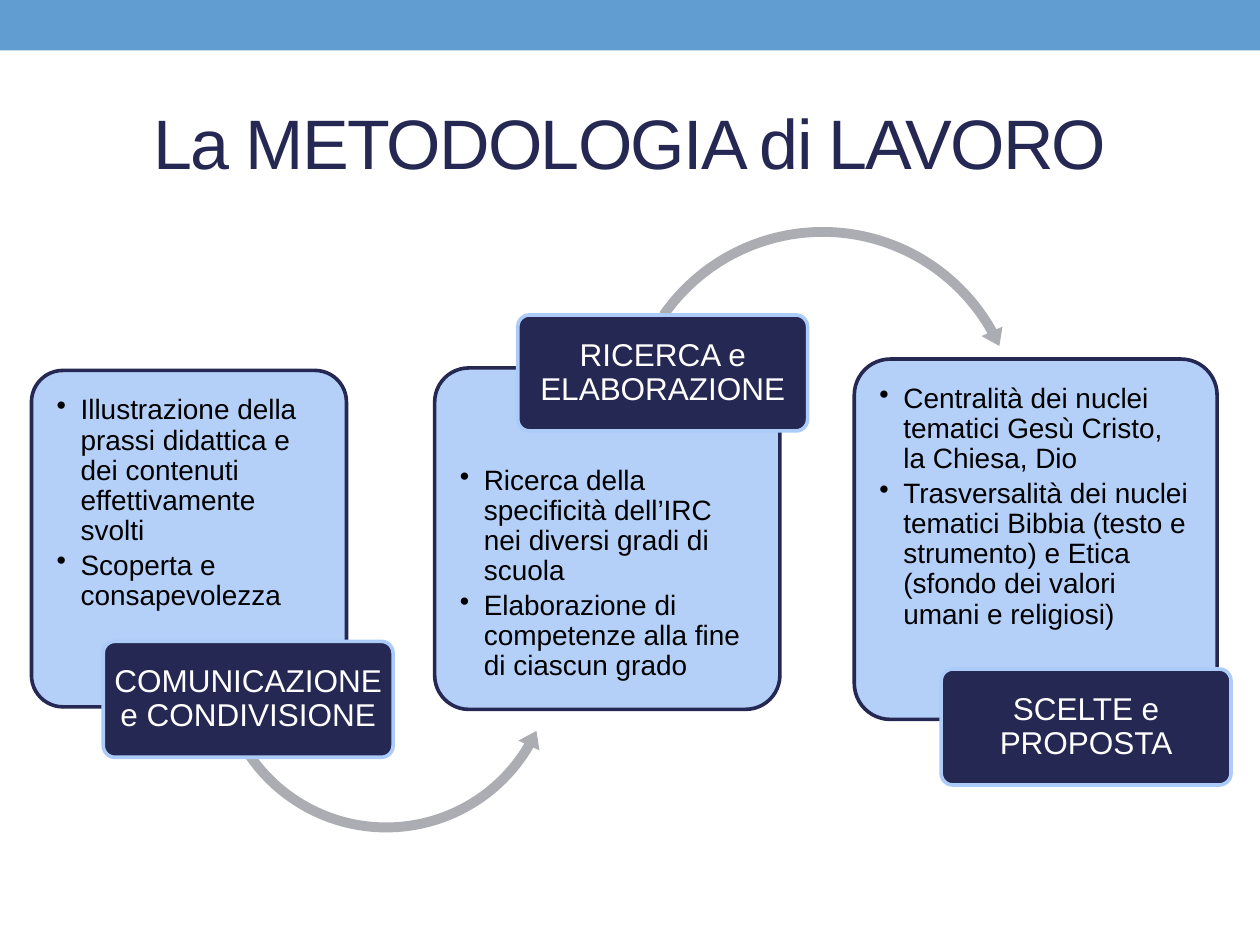
from lxml.etree import SubElement
from pptx import Presentation
from pptx.dml.color import RGBColor
from pptx.enum.shapes import MSO_SHAPE as Shape
from pptx.enum.text import MSO_ANCHOR as Anchor, PP_ALIGN as Align
from pptx.oxml.ns import qn
from pptx.util import Inches, Pt

COLUMNS, ROWS = 100, 75
CELL = Inches(10) // COLUMNS
FONT = "Arial"
COLORS = {
    "band": "629DD1",
    "navy": "242852",
    "sky": "ACCBF9",
    "arrow": "ACADB3",
    "white": "FFFFFF",
    "black": "000000",
}
LABEL_SIZE = (23, 9.2)
LABEL_PADDING = 0.27
CARD_PADDING = 0.6
STEPS = [
    {
        "card": (2.5, 29.4, 25, 26.7),
        "body": (30, 19.8),
        "label": (8.2, 50.9),
        "title": "COMUNICAZIONE e CONDIVISIONE",
        "points": [
            "Illustrazione della prassi didattica e dei contenuti effettivamente svolti",
            "Scoperta e consapevolezza",
        ],
        "arrow": (Shape.LEFT_CIRCULAR_ARROW, (16.6, 38.5, 28.1, 28.1),
                  (0.028, 3.403, 18.17, 87.256, 0.033)),
    },
    {
        "card": (34.5, 29.2, 27.4, 27.1),
        "body": (35.6, 20),
        "label": (41.1, 25),
        "title": "RICERCA e ELABORAZIONE",
        "points": [
            "Ricerca della specificità dell’IRC nei diversi gradi di scuola",
            "Elaborazione di competenze alla fine di ciascun grado",
        ],
        "arrow": (Shape.CIRCULAR_ARROW, (49, 17.5, 32.6, 32.6),
                  (0.024, 2.904, 198.503, 128.918, 0.028)),
    },
    {
        "card": (67.8, 28.5, 28.8, 28.6),
        "body": (29.1, 21.2),
        "label": (74.7, 53.1),
        "title": "SCELTE e PROPOSTA",
        "points": [
            "Centralità dei nuclei tematici Gesù Cristo, la Chiesa, Dio",
            "Trasversalità dei nuclei tematici Bibbia (testo e strumento) "
            "e Etica (sfondo dei valori umani e religiosi)",
        ],
        "arrow": None,
    },
]


def color(name):
    return RGBColor.from_string(COLORS[name])


def place(area):
    return [round(cells * CELL) for cells in area]


def add_shape(slide, kind, area, fill, line=None, adjustments=()):
    shape = slide.shapes.add_shape(kind, *place(area))
    shape.shadow.inherit = False
    shape.fill.solid()
    shape.fill.fore_color.rgb = color(fill)
    if line:
        shape.line.color.rgb = color(line)
        shape.line.width = Pt(2.08)
    else:
        shape.line.fill.background()
    for index, value in enumerate(adjustments):
        shape.adjustments[index] = value
    return shape


def add_text(slide, area, lines, size, font_color, align, anchor, insets, spacing=1.0):
    text_frame = slide.shapes.add_textbox(*place(area)).text_frame
    text_frame.word_wrap = True
    text_frame.vertical_anchor = anchor
    text_frame.margin_left = text_frame.margin_right = Inches(insets[0])
    text_frame.margin_top = text_frame.margin_bottom = Inches(insets[1])
    text_frame.text = "\n".join(lines)
    for paragraph in text_frame.paragraphs:
        paragraph.alignment = align
        paragraph.line_spacing = spacing
        font = paragraph.runs[0].font
        font.name, font.size = FONT, Pt(size)
        font.color.rgb = color(font_color)
    return text_frame


def add_title(slide, text):
    text_frame = add_text(slide, (5, 5.8, 90, 10.8), [text], 40, "navy",
                          Align.CENTER, Anchor.MIDDLE, (0.1, 0.05))
    text_frame.paragraphs[0].runs[0].font._element.set("spc", "-100")


def add_bullet(paragraph):
    paragraph.level = 1
    paragraph.space_after = Pt(2.4)
    properties = paragraph._p.get_or_add_pPr()
    properties.set("marL", str(Inches(0.19)))
    properties.set("indent", str(-Inches(0.19)))
    SubElement(properties, qn("a:buChar")).set("char", "•")


def add_card(slide, step):
    left, top, width, height = step["card"]
    card = add_shape(slide, Shape.ROUNDED_RECTANGLE, step["card"], "sky", "navy", [0.1])
    fill_color = card._element.spPr.find(qn("a:solidFill"))[0]
    SubElement(fill_color, qn("a:alpha")).set("val", "90000")
    body_top, body_height = step["body"]
    area = (left + CARD_PADDING, body_top, width - 2 * CARD_PADDING, body_height)
    text_frame = add_text(slide, area, step["points"], 16, "black",
                          Align.LEFT, Anchor.TOP, (0.14, 0.14), 0.9)
    for paragraph in text_frame.paragraphs:
        add_bullet(paragraph)


def add_arrow(slide, arrow):
    kind, area, adjustments = arrow
    add_shape(slide, kind, area, "arrow", adjustments=adjustments)


def add_label(slide, step):
    left, top = step["label"]
    width, height = LABEL_SIZE
    add_shape(slide, Shape.ROUNDED_RECTANGLE, (left, top, width, height),
              "navy", "sky", [0.1])
    area = (left + LABEL_PADDING, top + LABEL_PADDING,
            width - 2 * LABEL_PADDING, height - 2 * LABEL_PADDING)
    add_text(slide, area, [step["title"]], 18, "white",
             Align.CENTER, Anchor.MIDDLE, (0.04, 0.03), 0.9)


def main():
    presentation = Presentation()
    presentation.slide_width = COLUMNS * CELL
    presentation.slide_height = ROWS * CELL
    slide = presentation.slides.add_slide(presentation.slide_layouts[6])
    add_shape(slide, Shape.RECTANGLE, (0, 0, COLUMNS, 4), "band")
    add_title(slide, "La METODOLOGIA di LAVORO")
    for step in STEPS:
        add_card(slide, step)
        if step["arrow"]:
            add_arrow(slide, step["arrow"])
        add_label(slide, step)
    presentation.save("out.pptx")


if __name__ == "__main__":
    main()
